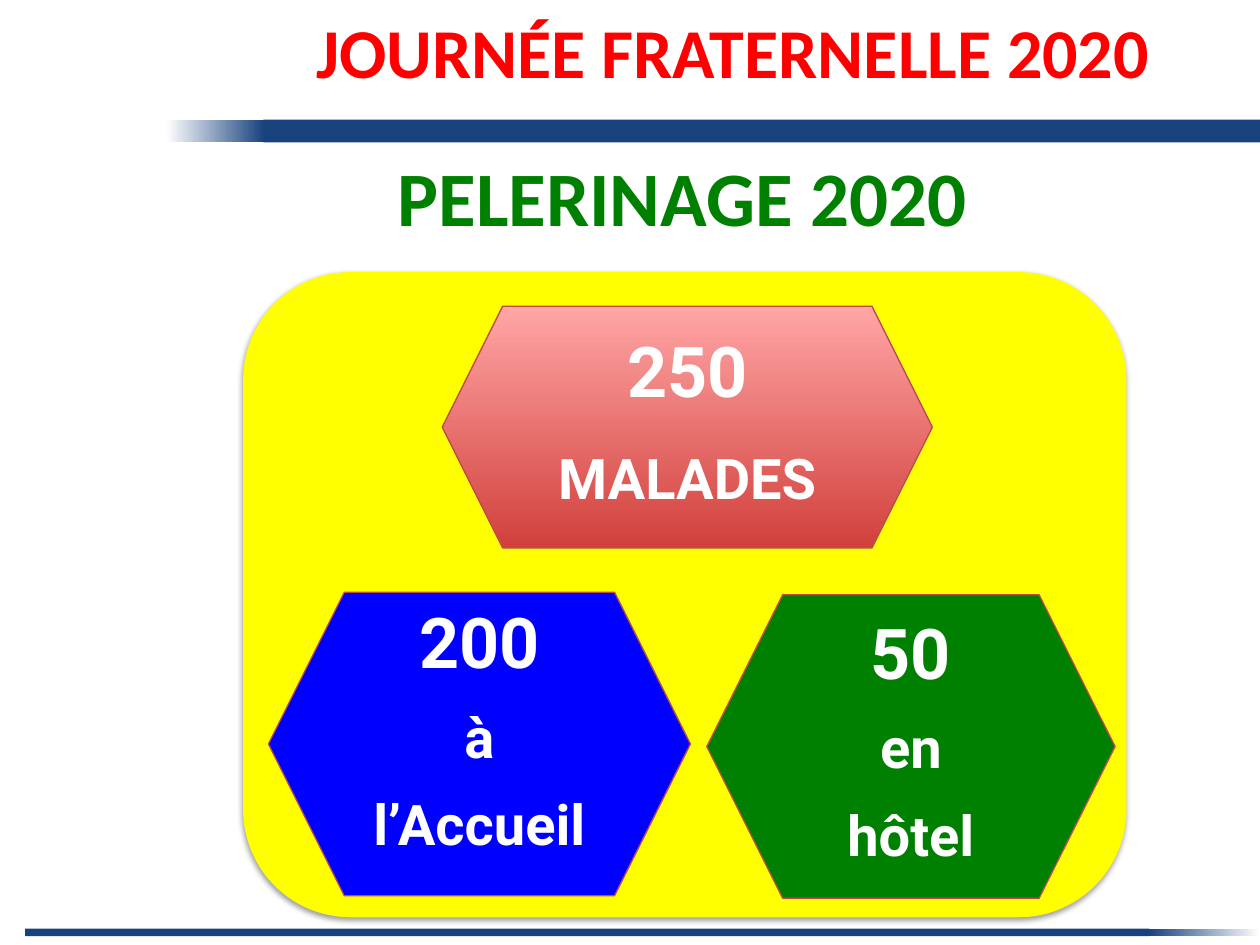
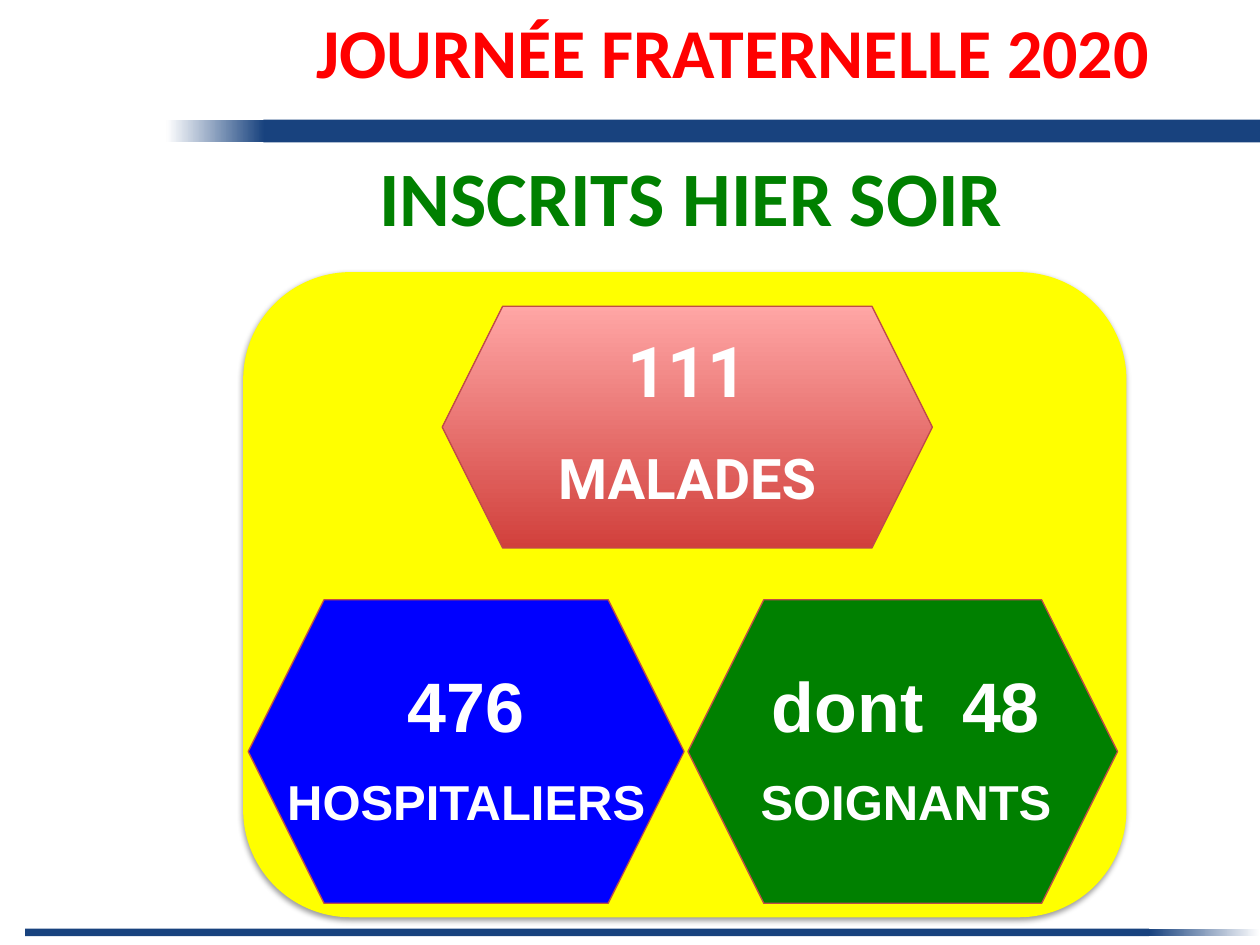
from dataclasses import dataclass
from typing import Optional

import pptx
import pptx.dml.color
import pptx.dml.fill
import pptx.enum.shapes
import pptx.enum.text
import pptx.oxml
import pptx.oxml.ns
import pptx.shapes.autoshape
import pptx.slide
import pptx.text.text
import pptx.util

Inches = pptx.util.Inches
Pt = pptx.util.Pt
SHAPE = pptx.enum.shapes.MSO_SHAPE
ANCHOR = pptx.enum.text.MSO_ANCHOR
Shape = pptx.shapes.autoshape.Shape
Slide = pptx.slide.Slide


@dataclass(frozen=True)
class Theme:
    navy: str = "18427E"
    white: str = "FFFFFF"
    red: str = "FF0000"
    green: str = "008000"
    blue: str = "0000FF"
    yellow: str = "FFFF00"
    outline: str = "BF4C48"
    coral: tuple[str, str] = ("D1403C", "FFA6A5")
    title_font: str = "Calibri"
    header_size: int = 40
    title_size: int = 44
    figure_size: int = 40
    word_size: int = 32
    small_word_size: int = 28


THEME = Theme()


@dataclass(frozen=True)
class Box:
    left: float
    top: float
    width: float
    height: float

    def lengths(self) -> tuple[int, int, int, int]:
        return (Inches(self.left), Inches(self.top),
                Inches(self.width), Inches(self.height))


@dataclass(frozen=True)
class Line:
    text: str
    size: int
    spacing: Optional[float] = None
    before: float = 0


@dataclass(frozen=True)
class Hexagon:
    box: Box
    fill: str | tuple[str, str]
    lines: tuple[Line, ...]
    font: str = "Roboto"
    bottom_inset: float = 0.05
    label_box: Optional[Box] = None


@dataclass(frozen=True)
class Page:
    title: str
    hexagons: tuple[Hexagon, ...]


def rgb(value: str) -> pptx.dml.color.RGBColor:
    return pptx.dml.color.RGBColor.from_string(value)


def paint(fill: pptx.dml.fill.FillFormat, colour: str | tuple[str, str],
          angle: float = 90) -> None:
    """Fill with one colour, or with a gradient running along the angle."""
    if isinstance(colour, str):
        fill.solid()
        fill.fore_color.rgb = rgb(colour)
        return
    fill.gradient()
    fill.gradient_angle = angle
    for stop, value in zip(fill.gradient_stops, colour):
        stop.color.rgb = rgb(value)


def add_shape(s: Slide, kind: SHAPE, box: Box, colour: str | tuple[str, str],
              angle: float = 90) -> Shape:
    sp = s.shapes.add_shape(kind, *box.lengths())
    sp.shadow.inherit = False
    sp.line.fill.background()
    paint(sp.fill, colour, angle)
    return sp


def write(tf: pptx.text.text.TextFrame, lines: tuple[Line, ...], font: str,
          colour: str) -> None:
    tf.word_wrap = True
    tf.text = "\n".join(line.text for line in lines)
    for p, line in zip(tf.paragraphs, lines):
        p.alignment = pptx.enum.text.PP_ALIGN.CENTER
        if line.spacing:
            p.line_spacing = line.spacing
        if line.before:
            p.space_before = Pt(line.before)
        for r in p.runs:
            r.font.name = font
            r.font.size = Pt(line.size)
            r.font.bold = True
            r.font.color.rgb = rgb(colour)


def add_text(s: Slide, box: Box, lines: tuple[Line, ...], font: str, colour: str,
             side_inset: float = 0.05, anchor: ANCHOR = ANCHOR.TOP) -> None:
    tf = s.shapes.add_textbox(*box.lengths()).text_frame
    tf.margin_left = tf.margin_right = Inches(side_inset)
    tf.vertical_anchor = anchor
    write(tf, lines, font, colour)


def add_frame(s: Slide, title: str) -> None:
    """Draw the bands, the header and the title that every slide has."""
    fade = (THEME.navy, THEME.white)
    add_shape(s, SHAPE.RECTANGLE, Box(0.2, 7.37, 8.92, 0.06), THEME.navy)
    add_shape(s, SHAPE.RECTANGLE, Box(9.12, 7.37, 0.88, 0.06), fade, angle=0)
    add_shape(s, SHAPE.RECTANGLE, Box(2.09, 0.95, 7.91, 0.18), THEME.navy)
    add_shape(s, SHAPE.RECTANGLE, Box(1.32, 0.95, 0.78, 0.18), fade, angle=180)
    add_text(s, Box(1.78, 0.02, 8.07, 0.77),
             (Line("JOURNÉE FRATERNELLE 2020", THEME.header_size),),
             THEME.title_font, THEME.red)
    add_text(s, Box(1.73, 0.87, 7.51, 1.1), (Line(title, THEME.title_size),),
             THEME.title_font, THEME.green, side_inset=0.1, anchor=ANCHOR.BOTTOM)


def add_panel(s: Slide) -> None:
    sp = add_shape(s, SHAPE.ROUNDED_RECTANGLE, Box(1.93, 2.16, 7.01, 5.12), THEME.yellow)
    effects = sp.element.spPr.find(pptx.oxml.ns.qn("a:effectLst"))
    effects.append(pptx.oxml.parse_xml(
        f'<a:outerShdw {pptx.oxml.ns.nsdecls("a")} blurRad="{Pt(3)}" dist="{Pt(1.6)}" '
        'dir="5400000" rotWithShape="0">'
        '<a:srgbClr val="000000"><a:alpha val="38000"/></a:srgbClr></a:outerShdw>'))


def add_hexagon(s: Slide, hexagon: Hexagon) -> None:
    sp = add_shape(s, SHAPE.HEXAGON, hexagon.box, hexagon.fill)
    sp.line.color.rgb = rgb(THEME.outline)
    sp.line.width = Pt(0.75)
    if hexagon.label_box:
        return
    tf = sp.text_frame
    tf.vertical_anchor = ANCHOR.MIDDLE
    tf.margin_bottom = Inches(hexagon.bottom_inset)
    write(tf, hexagon.lines, hexagon.font, THEME.white)


def add_page(prs: pptx.presentation.Presentation, page: Page) -> None:
    s = prs.slides.add_slide(prs.slide_layouts[6])
    add_frame(s, page.title)
    add_panel(s)
    for hexagon in page.hexagons:
        add_hexagon(s, hexagon)
    for hexagon in page.hexagons:
        if hexagon.label_box:
            add_text(s, hexagon.label_box, hexagon.lines, hexagon.font, THEME.white)


def patients(count: str) -> Hexagon:
    return Hexagon(Box(3.51, 2.43, 3.89, 1.92), THEME.coral,
                   (Line(count, THEME.figure_size, 0.8),
                    Line("MALADES", THEME.word_size, before=19)))


def lodging(box: Box, fill: str, count: str, words: tuple[str, str],
            spacing: Optional[float] = None, bottom_inset: float = 0.05) -> Hexagon:
    return Hexagon(box, fill,
                   (Line(count, THEME.figure_size, spacing),
                    *(Line(word, THEME.word_size, 1.3) for word in words)),
                   bottom_inset=bottom_inset)


def staff(box: Box, fill: str, count: str, role: str, label_left: float) -> Hexagon:
    return Hexagon(box, fill,
                   (Line(count, THEME.figure_size),
                    Line(role, THEME.small_word_size, before=14)),
                   font="Arial", label_box=Box(label_left, 5.21, 3.18, 1.45))


PAGES = (
    Page("PELERINAGE 2020 ", (
        patients("250"),
        lodging(Box(2.13, 4.7, 3.35, 2.41), THEME.blue, "200", ("à", "l’Accueil"),
                bottom_inset=0.31),
        lodging(Box(5.61, 4.72, 3.24, 2.41), THEME.green, "50", ("en", "hôtel"),
                spacing=0.8),
    )),
    Page("INSCRITS HIER SOIR", (
        patients("111"),
        staff(Box(1.97, 4.76, 3.46, 2.41), THEME.blue, "476", "HOSPITALIERS", 2.11),
        staff(Box(5.46, 4.76, 3.41, 2.41), THEME.green, "dont  48", "SOIGNANTS", 5.6),
    )),
)


def main() -> None:
    prs = pptx.Presentation()
    prs.slide_width, prs.slide_height = Inches(10), Inches(7.5)
    for page in PAGES:
        add_page(prs, page)
    prs.save("out.pptx")


if __name__ == "__main__":
    main()
